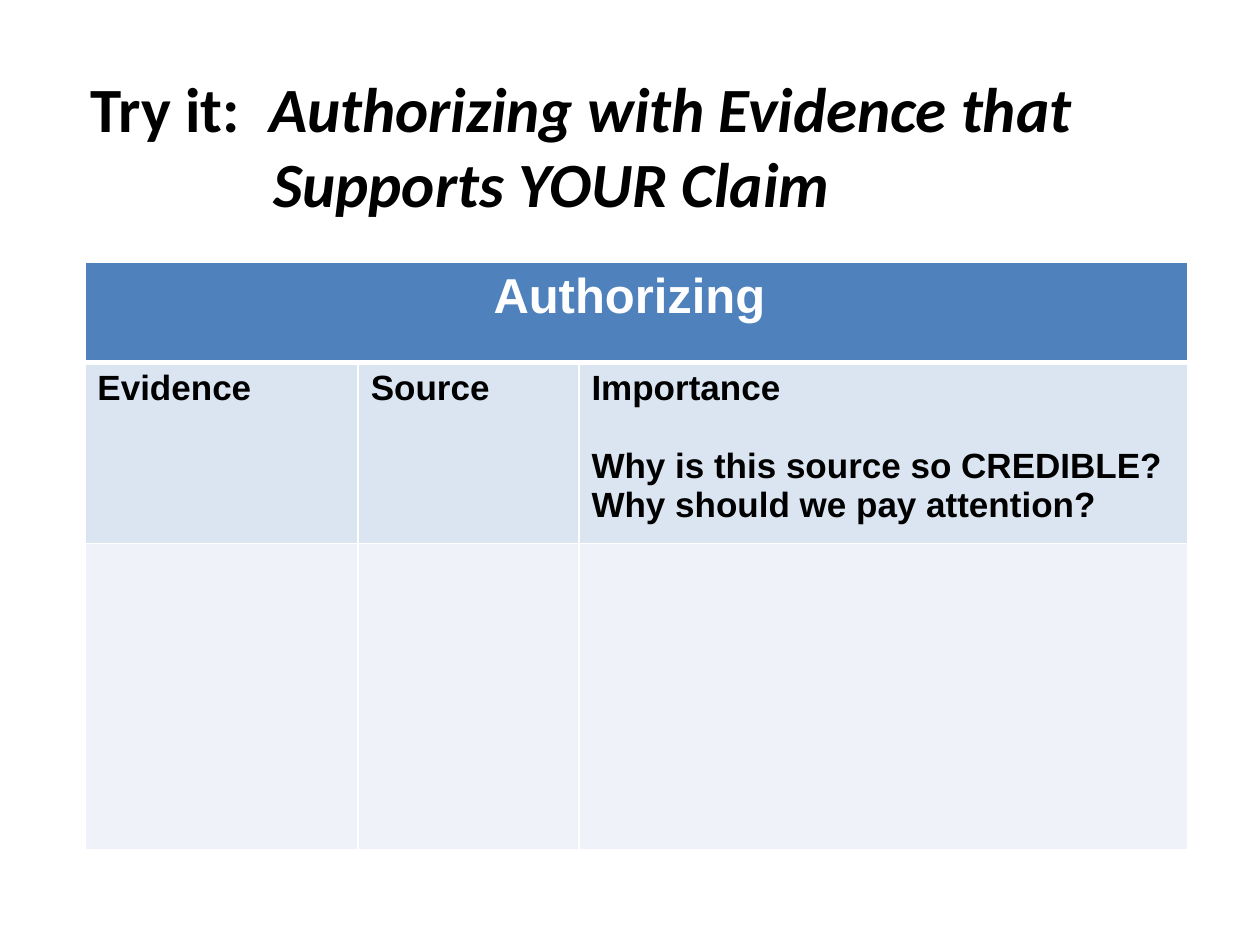
from typing import NamedTuple

from lxml.etree import SubElement
from pptx import Presentation
from pptx.dml.color import RGBColor
from pptx.enum.text import MSO_ANCHOR, MSO_AUTO_SIZE, PP_ALIGN
from pptx.oxml import parse_xml
from pptx.oxml.ns import nsdecls, qn
from pptx.util import Cm, Pt

TITLE_ONLY = 5
COLUMN_WIDTHS = (5.51, 4.45, 12.27)
TITLE_FORMAT = {"name": "Calibri", "size": Pt(36), "bold": True}
HEADER_FORMAT = {"name": "Arial", "size": Pt(28), "bold": True}
LABEL_FORMAT = {"name": "Arial", "size": Pt(20), "bold": True}


class Row(NamedTuple):
    height: float
    fill: str
    text_color: str
    text_format: dict
    align: PP_ALIGN
    bottom_border: float
    cells: tuple[tuple[str, ...], ...]


ROWS = (
    Row(2.02, "4F81BD", "FFFFFF", HEADER_FORMAT, PP_ALIGN.CENTER, 3,
        (("Authorizing ",), (), ())),
    Row(3.65, "DBE5F1", "000000", LABEL_FORMAT, PP_ALIGN.LEFT, 1,
        (("Evidence",), ("Source",),
         ("Importance",
          "Why is this source so CREDIBLE? Why should we pay attention?"))),
    Row(6.17, "EFF3F9", "000000", LABEL_FORMAT, PP_ALIGN.LEFT, 1,
        ((), (), ())),
)


def color(value: str) -> RGBColor:
    return RGBColor.from_string(value)


def format_font(font, values: dict, text_color: str) -> None:
    for name, value in values.items():
        setattr(font, name, value)
    font.color.rgb = color(text_color)


def add_title(slide) -> None:
    title = slide.shapes.title
    title.left, title.top = Cm(1.57), Cm(1.27)
    title.width, title.height = Cm(20.88), Cm(3.33)
    frame = title.text_frame
    frame.word_wrap = True
    frame.auto_size = MSO_AUTO_SIZE.NONE
    frame.vertical_anchor = MSO_ANCHOR.TOP

    first = frame.paragraphs[0]
    second = frame.add_paragraph()
    tabs = SubElement(first._p.get_or_add_pPr(), qn("a:tabLst"))
    SubElement(tabs, qn("a:tab"), pos=str(Cm(3.6)), algn="l")
    second._p.get_or_add_pPr().set("marL", str(Cm(3.68)))

    for paragraph, text, italic in (
        (first, "Try it:\t", False),
        (first, "Authorizing with Evidence that", True),
        (second, "Supports YOUR Claim", True),
    ):
        paragraph.alignment = PP_ALIGN.LEFT
        run = paragraph.add_run()
        run.text = text
        format_font(run.font, TITLE_FORMAT | {"italic": italic}, "000000")


def set_borders(cell, top: float, bottom: float) -> None:
    """Draw white borders, with widths in points; sides are 1 point."""
    properties = cell._tc.get_or_add_tcPr()
    sides = {"lnL": 1, "lnR": 1, "lnT": top, "lnB": bottom}
    for index, (side, width) in enumerate(sides.items()):
        properties.insert(index, parse_xml(
            f'<a:{side} {nsdecls("a")} w="{Pt(width)}"><a:solidFill>'
            f'<a:srgbClr val="FFFFFF"/></a:solidFill></a:{side}>'))


def fill_cell(cell, row: Row, lines: tuple[str, ...], top_border: float) -> None:
    cell.fill.solid()
    cell.fill.fore_color.rgb = color(row.fill)
    set_borders(cell, top_border, row.bottom_border)
    frame = cell.text_frame
    for index, line in enumerate(lines):
        paragraph = frame.add_paragraph() if index else frame.paragraphs[0]
        paragraph.alignment = row.align
        if index:
            paragraph.space_before = Pt(22)
        run = paragraph.add_run()
        run.text = line
        format_font(run.font, row.text_format, row.text_color)


def add_evidence_table(slide) -> None:
    table = slide.shapes.add_table(
        len(ROWS), len(COLUMN_WIDTHS), Cm(1.71), Cm(5.29),
        Cm(sum(COLUMN_WIDTHS)), Cm(sum(row.height for row in ROWS))).table
    table.first_row = table.horz_banding = False
    for column, width in zip(table.columns, COLUMN_WIDTHS):
        column.width = Cm(width)
    top_border = 1
    for row_index, row in enumerate(ROWS):
        table.rows[row_index].height = Cm(row.height)
        for column_index, lines in enumerate(row.cells):
            fill_cell(table.cell(row_index, column_index), row, lines, top_border)
        top_border = row.bottom_border
    table.cell(0, 0).merge(table.cell(0, len(COLUMN_WIDTHS) - 1))


def main() -> None:
    presentation = Presentation()
    presentation.slide_width, presentation.slide_height = Cm(25.4), Cm(19.05)
    slide = presentation.slides.add_slide(presentation.slide_layouts[TITLE_ONLY])
    add_title(slide)
    add_evidence_table(slide)
    presentation.save("out.pptx")


if __name__ == "__main__":
    main()
